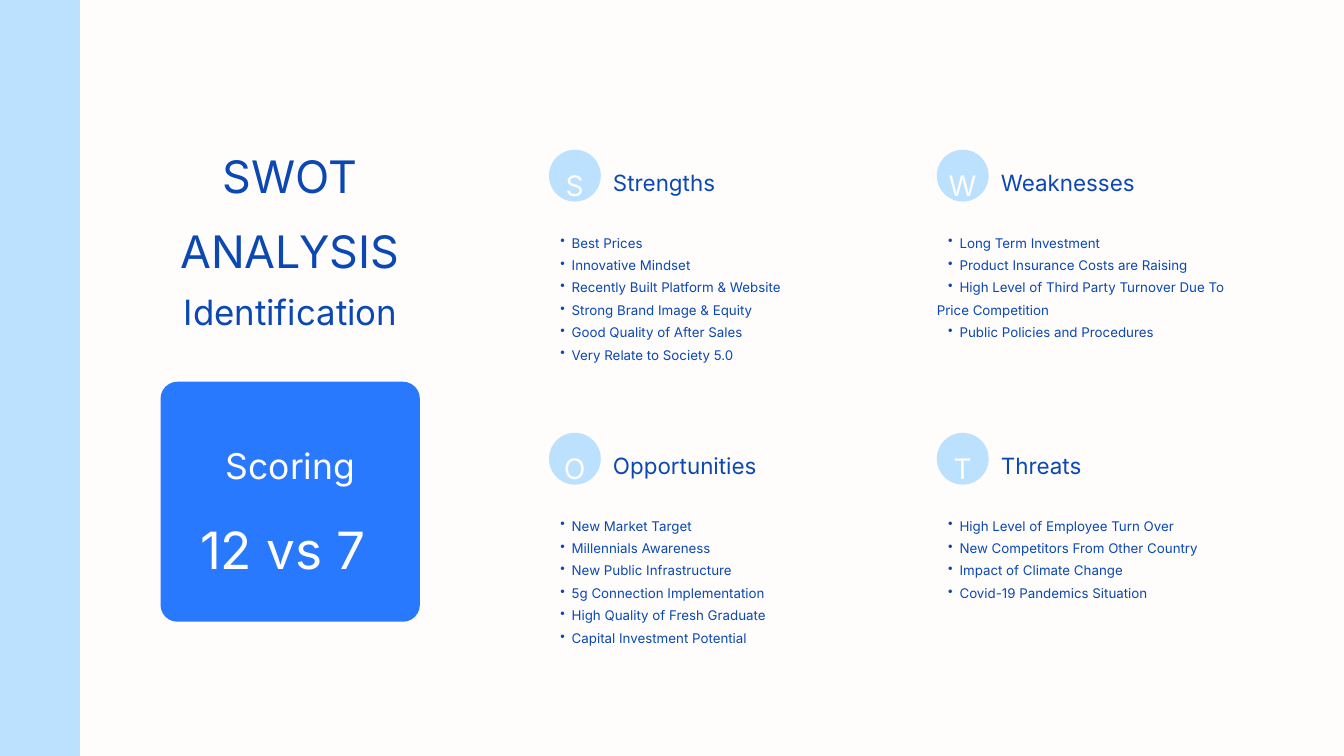
"""Build a SWOT analysis slide with a scoring card."""
from lxml import etree
from pptx import Presentation
from pptx import util as u
from pptx.dml.color import RGBColor
from pptx.enum import shapes, text
from pptx.oxml.ns import qn

COLORS = {"background": "FFFCFC", "navy": "0B48B3", "blue": "2979FF", "sky": "BCE1FF"}
FONT = "Inter"
LINE_HEIGHT = 0.695
COLUMNS = (20.75, 35.41)
ROWS = (5.66, 16.36)
BULLET = "• "

QUADRANTS = [
    ("Strengths", 6.15, 11.63, [
        "• Best Prices", "• Innovative Mindset", "• Recently Built Platform & Website",
        "• Strong Brand Image & Equity", "• Good Quality of After Sales",
        "• Very Relate to Society 5.0"]),
    ("Weaknesses", 6.81, 13.69, [
        "• Long Term Investment", "• Product Insurance Costs are Raising",
        "• High Level of Third Party Turnover Due To", "Price Competition",
        "• Public Policies and Procedures"]),
    ("Opportunities", 7.67, 11.63, [
        "• New Market Target", "• Millennials Awareness", "• New Public Infrastructure",
        "• 5g Connection Implementation", "• High Quality of Fresh Graduate",
        "• Capital Investment Potential"]),
    ("Threats", 5.66, 12.95, [
        "• High Level of Employee Turn Over", "• New Competitors From Other Country",
        "• Impact of Climate Change", "• Covid-19 Pandemics Situation"]),
]

presentation = Presentation()
presentation.slide_width = u.Cm(50.8)
presentation.slide_height = u.Cm(28.575)
slide = presentation.slides.add_slide(presentation.slide_layouts[6])
slide.background.fill.solid()
slide.background.fill.fore_color.rgb = RGBColor.from_string(COLORS["background"])


def add_panel(kind, left, top, width, height, color, rounding=None):
    shape = slide.shapes.add_shape(kind, u.Cm(left), u.Cm(top), u.Cm(width), u.Cm(height))
    shape.shadow.inherit = False
    shape.fill.solid()
    shape.fill.fore_color.rgb = RGBColor.from_string(COLORS[color])
    shape.line.fill.background()
    if rounding is not None:
        shape.adjustments[0] = rounding


def add_text(lines, left, top, width, height, size, color, align=text.PP_ALIGN.CENTER):
    box = slide.shapes.add_textbox(u.Cm(left), u.Cm(top), u.Cm(width), u.Cm(height))
    frame = box.text_frame
    frame.word_wrap = True
    frame.auto_size = text.MSO_AUTO_SIZE.SHAPE_TO_FIT_TEXT
    frame.margin_left = frame.margin_top = frame.margin_right = frame.margin_bottom = 0
    for index, line in enumerate(lines):
        paragraph = frame.add_paragraph() if index else frame.paragraphs[0]
        paragraph.text = line.removeprefix(BULLET)
        paragraph.alignment = align
        paragraph.line_spacing = 1.4
        paragraph.font.name = FONT
        paragraph.font.size = u.Pt(size)
        paragraph.font.color.rgb = RGBColor.from_string(COLORS[color])
        if line.startswith(BULLET):
            paragraph.level = 1
            properties = paragraph._p.get_or_add_pPr()
            properties.set("marL", str(u.Cm(0.86)))
            properties.set("indent", str(u.Cm(-0.43)))
            bullet = etree.Element(qn("a:buChar"), char=BULLET.strip())
            properties.find(qn("a:defRPr")).addprevious(bullet)


add_panel(shapes.MSO_SHAPE.ROUNDED_RECTANGLE, 6.07, 14.43, 9.8, 9.07, "blue", 0.07)
add_text(["SWOT", "ANALYSIS"], 4.85, 4.8, 12.22, 4.65, 48, "navy")
add_text(["Identification"], 5.31, 10.36, 11.35, 1.75, 37.3, "navy")
add_text(["Scoring"], 6.73, 16.15, 8.51, 1.8, 38, "background")

for index, (heading, heading_width, list_width, items) in enumerate(QUADRANTS):
    left, top = COLUMNS[index % 2], ROWS[index // 2]
    add_panel(shapes.MSO_SHAPE.OVAL, left, top, 1.96, 1.96, "sky")
    add_text([heading[0]], left + 0.3, top + 0.18, 1.35, 1.45, 30.3, "background")
    add_text([heading], left + 2.42, top + 0.33, heading_width, 1.12, 24, "navy",
             text.PP_ALIGN.LEFT)
    add_text(items, left, top + 2.97, list_width, LINE_HEIGHT * len(items), 14.3, "navy",
             text.PP_ALIGN.LEFT)

add_text(["12 vs 7 "], 6.4, 18.67, 9.14, 2.59, 55, "background")
add_panel(shapes.MSO_SHAPE.ROUNDED_RECTANGLE, -1.5, -1.17, 4.52, 30.91, "sky", 0.1)

presentation.save("out.pptx")
